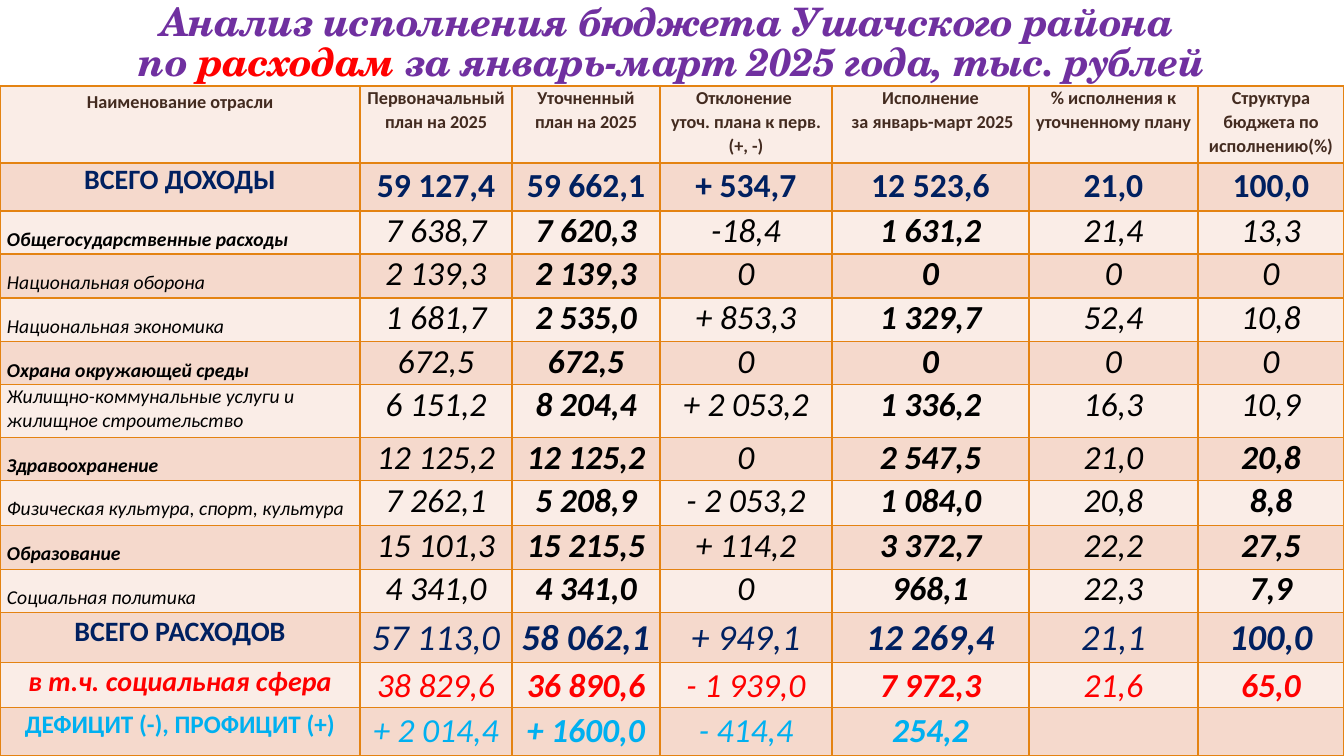
import pptx
import pptx.util
import pptx.dml.color
import pptx.enum.text
import pptx.oxml

PX = 914400 / 100.8
COLORS = {
    "title": "7030A0", "red": "FF0000", "header": "432B20", "total": "002060",
    "text": "000000", "balance": "00B0F0", "border": "E48312",
    "light": "FAEDE7", "dark": "F5D9CC",
}
COLUMN_WIDTHS = [360, 152, 148, 172, 197, 169, 146]
TABLE_TOP = 86
CENTER = pptx.enum.text.PP_ALIGN.CENTER
LEFT = pptx.enum.text.PP_ALIGN.LEFT
EXACT = pptx.util.Pt(28.8)

HEADERS = [
    "Наименование отрасли", "Первоначальный план на 2025", "Уточненный план на 2025",
    "Отклонение \nуточ. плана к перв. (+, -)", "Исполнение\n за январь-март 2025",
    "% исполнения к уточненному плану", "Структура бюджета по исполнению(%)",
]
# Height, label, label is bold, bold value columns, values
SECTORS = [
    (43, "Общегосударственные расходы", True, (2, 4),
     ["7 638,7", "7 620,3", "-18,4", "1 631,2", "21,4", "13,3"]),
    (44, "Национальная оборона", False, (2, 4),
     ["2 139,3", "2 139,3", "0", "0", "0", "0"]),
    (44, "Национальная экономика", False, (2, 4),
     ["1 681,7", "2 535,0", "+ 853,3", "1 329,7", "52,4", "10,8"]),
    (43, "Охрана окружающей среды", True, (2, 4),
     ["672,5", "672,5", "0", "0", "0", "0"]),
    (53, "Жилищно-коммунальные услуги и жилищное строительство", False, (2, 4),
     ["6 151,2", "8 204,4", "+ 2 053,2", "1 336,2", "16,3", "10,9"]),
    (43, "Здравоохранение", True, (2, 4, 6),
     ["12 125,2", "12 125,2", "0", "2 547,5", "21,0", "20,8"]),
    (45, "Физическая культура, спорт, культура", False, (2, 4, 6),
     ["7 262,1", "5 208,9", "- 2 053,2", "1 084,0", "20,8", "8,8"]),
    (44, "Образование", True, (2, 4, 6),
     ["15 101,3", "15 215,5", "+ 114,2", "3 372,7", "22,2", "27,5"]),
    (43, "Социальная политика", False, (2, 4, 6),
     ["4 341,0", "4 341,0", "0", "968,1", "22,3", "7,9"]),
]
# Height, color, label size, label is italic, value size, values
SUMMARIES = [
    (50, "total", 20, False, 26,
     ["ВСЕГО РАСХОДОВ", "57 113,0", "58 062,1", "+ 949,1", "12 269,4", "21,1", "100,0"]),
    (45, "red", 20, True, 24,
     ["в т.ч. социальная сфера", "38 829,6", "36 890,6", "- 1 939,0", "7 972,3", "21,6", "65,0"]),
    (48, "balance", 18, False, 24,
     ["ДЕФИЦИТ (-), ПРОФИЦИТ (+)", "+ 2 014,4", "+ 1600,0", "- 414,4", "254,2", "", ""]),
]


def px(length):
    return pptx.util.Emu(round(length * PX))


def write(para, text, size, color, bold=True, italic=False, font="Calibri",
          align=CENTER, spacing=1.07):
    para.alignment = align
    para.line_spacing = spacing
    span = para.add_run()
    span.text = text
    span.font.name = font
    span.font.size = pptx.util.Pt(size)
    span.font.bold = bold
    span.font.italic = italic
    span.font.color.rgb = pptx.dml.color.RGBColor.from_string(COLORS[color])
    return span


deck = pptx.Presentation()
deck.slide_width, deck.slide_height = px(1344), px(756)
page = deck.slides.add_slide(deck.slide_layouts[6])

# Every table row is a height and a list of (text, format) cells
rows = [
    (77, [(text, dict(size=13, color="header", spacing=1.07 if column else 1.0))
          for column, text in enumerate(HEADERS)]),
    (48, [("ВСЕГО ДОХОДЫ", dict(size=20, color="total", spacing=1.0))]
     + [(text, dict(size=24, color="total"))
        for text in ["59 127,4", "59 662,1", "+ 534,7", "12 523,6", "21,0", "100,0"]]),
]
for height, label, label_bold, bold_columns, values in SECTORS:
    label_spacing = 1.0 if height == 53 else EXACT
    cells = [(label, dict(size=14, color="text", bold=label_bold, italic=True,
                          align=LEFT, spacing=label_spacing))]
    cells += [(text, dict(size=24, color="text", bold=column in bold_columns,
                          italic=True, spacing=EXACT))
              for column, text in enumerate(values, 1)]
    rows.append((height, cells))
for height, color, label_size, label_italic, value_size, texts in SUMMARIES:
    rows.append((height, [
        (text, dict(size=value_size if column else label_size, color=color,
                    bold=column % 2 == 0, italic=bool(column) or label_italic))
        for column, text in enumerate(texts)]))

table = page.shapes.add_table(len(rows), len(COLUMN_WIDTHS), 0, px(TABLE_TOP),
                              px(1344), px(756 - TABLE_TOP)).table
for column, width in zip(table.columns, COLUMN_WIDTHS):
    column.width = px(width)
for row_index, (height, cells) in enumerate(rows):
    table.rows[row_index].height = px(height)
    for column_index, (text, style) in enumerate(cells):
        cell = table.cell(row_index, column_index)
        if text and (row_index or column_index):
            cell.margin_left = cell.margin_right = px(7)
            cell.margin_top = cell.margin_bottom = 0
        properties = cell._tc.get_or_add_tcPr()
        for side in "LRTB":
            properties.append(pptx.oxml.parse_xml(
                f'<a:ln{side} xmlns:a="http://schemas.openxmlformats.org/drawingml/2006/main" '
                f'w="12700"><a:solidFill><a:srgbClr val="{COLORS["border"]}"/>'
                f'</a:solidFill></a:ln{side}>'))
        cell.fill.solid()
        cell.fill.fore_color.rgb = pptx.dml.color.RGBColor.from_string(
            COLORS["dark" if row_index % 2 else "light"])
        if text:
            for line_index, line in enumerate(text.split("\n")):
                frame = cell.text_frame
                para = frame.add_paragraph() if line_index else frame.paragraphs[0]
                write(para, line, **style)

title = page.shapes.add_textbox(0, 0, px(1344), px(89)).text_frame
title.word_wrap = True
title.vertical_anchor = pptx.enum.text.MSO_ANCHOR.BOTTOM
title_para = title.paragraphs[0]
for text, color in [("Анализ исполнения бюджета Ушачского района ", "title"),
                    ("по ", "title"), ("расходам", "red"),
                    (" за январь-март 2025 года, тыс. рублей", "title")]:
    if text == "по ":
        title_para.add_line_break()
    span = write(title_para, text, 28, color, italic=True, font="TeX Gyre Schola", spacing=0.85)
    span.font._element.set("spc", "-50")

deck.save("out.pptx")
